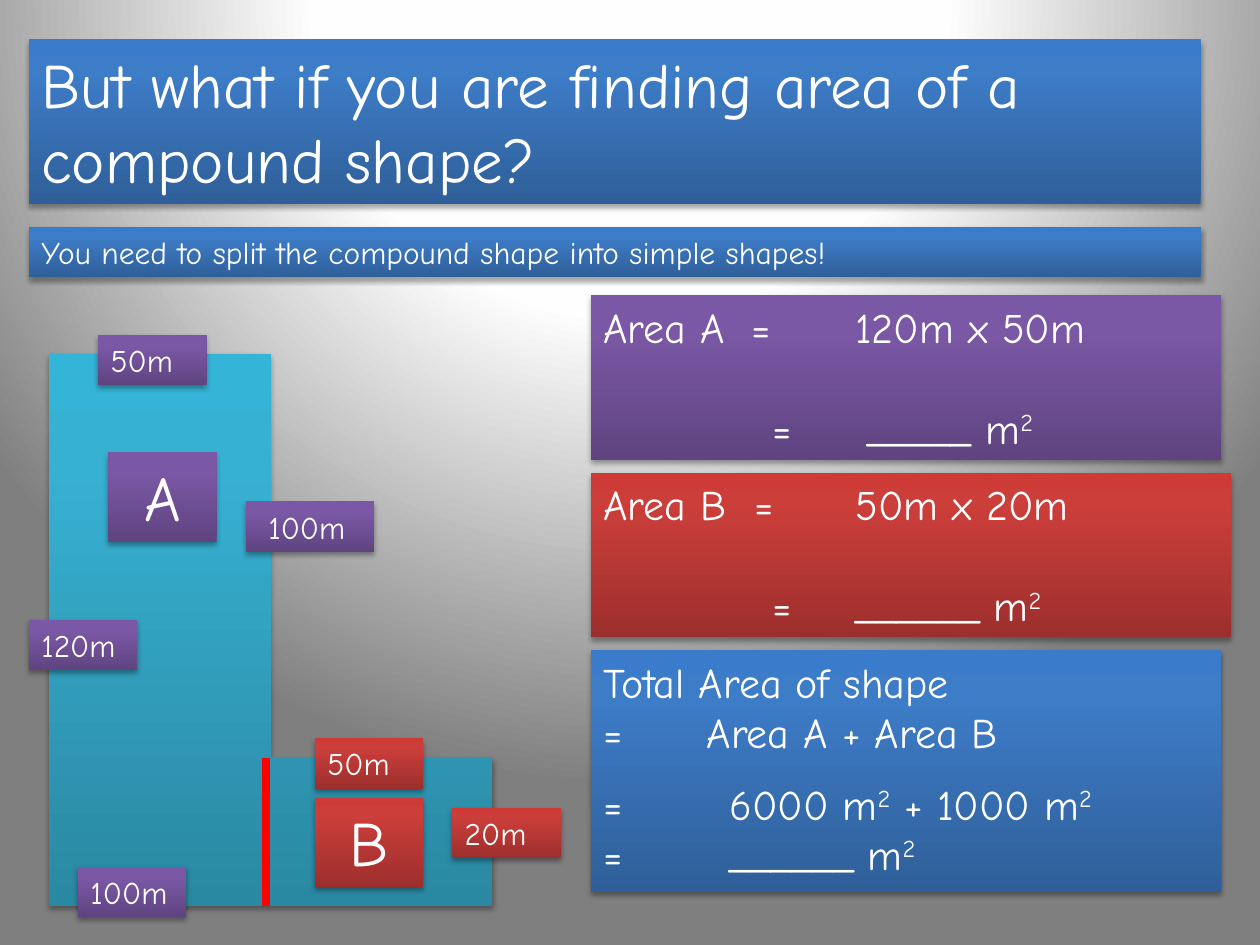
from dataclasses import dataclass

from lxml import etree
from pptx import Presentation
from pptx import util as u
from pptx.dml.color import RGBColor
from pptx.enum import shapes, text
from pptx.oxml.ns import qn

FONT = "Comic Neue"
COLS, ROWS = 100, 75
BLUE = ("2F5F99", "3D7CC7", "3A7CCB")
PURPLE = ("5F4480", "7B58A6", "7C57A8")
RED = ("9C2F2D", "CB3E3A", "CE3B37")
TEAL = ("2A88A2", "37B1D2", "34B4D6")


@dataclass
class Label:
    """A tag on the diagram; col and row are its top left corner."""
    words: str
    col: float
    row: float
    colours: tuple
    width: float = 8.6
    height: float = 4
    size: int = 18
    align: text.PP_ALIGN = text.PP_ALIGN.LEFT
    inset: float = 0.1


@dataclass
class Line:
    """A line of working; carets enclose superscripts, tabs are in inches."""
    words: str
    tabs: tuple = ()
    before: float = 0


@dataclass
class Panel:
    row: float
    width: float
    height: float
    colours: tuple
    lines: tuple


LABELS = (
    Label("50m", 7.8, 26.6, PURPLE),
    Label("100m", 6.2, 68.8, PURPLE),
    Label("50m", 25, 58.6, RED),
    Label("120m", 2.3, 49.2, PURPLE),
    Label("20m", 35.9, 64.1, RED),
    Label("100m", 19.5, 39.8, PURPLE, width=10.2, inset=0.18),
)
NAMES = tuple(
    Label(name, col, row, colours, height=7.1, size=36, align=text.PP_ALIGN.CENTER)
    for name, col, row, colours in (("A", 8.6, 35.9, PURPLE), ("B", 25, 63.3, RED))
)
PANELS = (
    Panel(37.5, 50.8, 13.1, RED, (
        Line("Area B\t=\t50m x 20m", (1.2, 2)),
        Line("\t=\t______ m^2^", (1.34, 2), 29),
    )),
    Panel(23.4, 50, 13.1, PURPLE, (
        Line("Area A\t=\t120m x 50m", (1.18, 2)),
        Line("\t=\t_____ m^2^", (1.34, 2.1), 29),
    )),
    Panel(51.6, 50, 19.2, BLUE, (
        Line("Total Area of shape"),
        Line("=\tArea A + Area B", (0.82,)),
        Line("=\t6000 m^2^ + 1000 m^2^", (1,), 12),
        Line("=\t______ m^2^", (1,)),
    )),
)


def grid(cells: float) -> int:
    return u.Inches(cells / 10)


def rgb(colour: str) -> RGBColor:
    return RGBColor.from_string(colour)


def add_child(parent, tag: str, **attributes):
    child = etree.SubElement(parent, qn(tag))
    for name, value in attributes.items():
        child.set(name, str(value))
    return child


def paint_gradient(fill, owner, stops: tuple, radial: bool = False) -> None:
    """Fill owner with (percent, colour) stops, upwards or from above the slide."""
    fill.gradient()
    grad = next(owner.iter(qn("a:gradFill")))
    for child in list(grad):
        grad.remove(child)
    stop_list = add_child(grad, "a:gsLst")
    for percent, colour in stops:
        stop = add_child(stop_list, "a:gs", pos=percent * 1000)
        add_child(stop, "a:srgbClr", val=colour)
    if radial:
        path = add_child(grad, "a:path", path="circle")
        add_child(path, "a:fillToRect", l=50000, t=-80000, r=50000, b=180000)
    else:
        add_child(grad, "a:lin", ang=270 * 60000, scaled=0)


def style_block(sp, colours: tuple) -> None:
    props = sp._element.spPr
    paint_gradient(sp.fill, props, tuple(zip((0, 80, 100), colours)))
    sp.line.fill.background()
    sp.shadow.inherit = False
    effects = props.find(qn("a:effectLst"))
    shadow = add_child(effects, "a:outerShdw", blurRad=u.Pt(3.1), dist=u.Pt(1.8),
                       dir=90 * 60000, rotWithShape=0)
    add_child(add_child(shadow, "a:srgbClr", val="000000"), "a:alpha", val=35000)


def place(sp, col: float, row: float, width: float, height: float) -> None:
    sp.left, sp.top, sp.width, sp.height = map(grid, (col, row, width, height))


def add_block(slide, col: float, row: float, width: float, height: float,
              colours: tuple, kind=shapes.MSO_SHAPE.RECTANGLE):
    sp = slide.shapes.add_shape(kind, *map(grid, (col, row, width, height)))
    style_block(sp, colours)
    return sp


def write(sp, lines: tuple, size: int, align=text.PP_ALIGN.LEFT,
          inset: float = 0.1) -> None:
    tf = sp.text_frame
    tf.word_wrap = True
    tf.auto_size = text.MSO_AUTO_SIZE.SHAPE_TO_FIT_TEXT
    tf.vertical_anchor = text.MSO_ANCHOR.TOP
    tf.margin_left = u.Inches(inset)
    for index, line in enumerate(lines):
        p = tf.add_paragraph() if index else tf.paragraphs[0]
        p.alignment = align
        if line.before:
            p.space_before = u.Pt(line.before)
        if line.tabs:
            tab_list = add_child(p._p.get_or_add_pPr(), "a:tabLst")
            for tab in line.tabs:
                add_child(tab_list, "a:tab", pos=u.Inches(tab), algn="l")
        for part, words in enumerate(line.words.split("^")):
            if not words:
                continue
            r = p.add_run()
            r.text = words
            r.font.name, r.font.size = FONT, u.Pt(size)
            r.font.color.rgb = rgb("FFFFFF")
            if part % 2:
                r._r.get_or_add_rPr().set("baseline", "30000")


def add_label(slide, label: Label) -> None:
    sp = add_block(slide, label.col, label.row, label.width, label.height, label.colours)
    write(sp, (Line(label.words),), label.size, label.align, label.inset)


def add_split(slide, col: float, top: float, bottom: float) -> None:
    line = slide.shapes.add_connector(shapes.MSO_CONNECTOR.STRAIGHT,
                                      *map(grid, (col, top, col, bottom)))
    line.line.color.rgb = rgb("FF0000")
    line.line.width = u.Pt(4.5)
    add_child(line._element.spPr, "a:effectLst")


def main() -> None:
    prs = Presentation()
    prs.slide_width, prs.slide_height = grid(COLS), grid(ROWS)
    slide = prs.slides.add_slide(prs.slide_layouts[5])
    paint_gradient(slide.background.fill, slide._element,
                   ((0, "FFFFFF"), (40, "FEFEFE"), (100, "7F7F7F")), radial=True)

    title = slide.shapes.title
    place(title, 2.3, 3.1, 93, 13.1)
    style_block(title, BLUE)
    write(title, (Line("But what if you are finding area of a compound shape?"),), 36)
    hint = add_block(slide, 2.3, 18, 93, 4, BLUE)
    write(hint, (Line("You need to split the compound shape into simple shapes!"),), 18)

    compound = add_block(slide, 3.9, 28.1, 35.2, 43.8, TEAL, shapes.MSO_SHAPE.CORNER)
    compound.adjustments[0], compound.adjustments[1] = 0.335, 0.5
    for label in LABELS:
        add_label(slide, label)
    for panel in PANELS:
        sp = add_block(slide, 46.9, panel.row, panel.width, panel.height, panel.colours)
        write(sp, panel.lines, 24)
    add_split(slide, 21.1, 60.2, 71.9)
    for name in NAMES:
        add_label(slide, name)
    prs.save("out.pptx")


if __name__ == "__main__":
    main()
